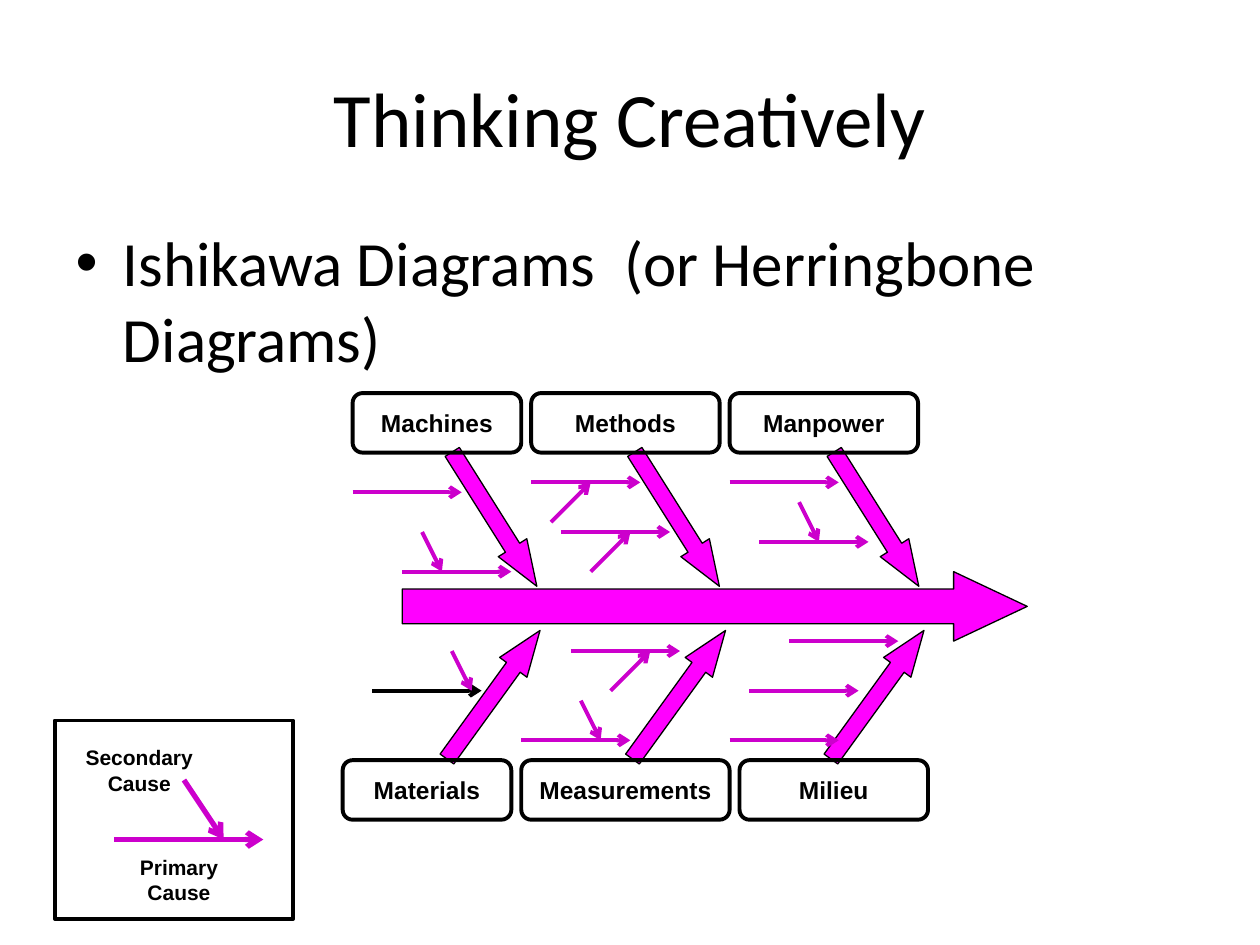
from dataclasses import dataclass
from typing import NamedTuple

from lxml import etree
from pptx import Presentation, util as u
from pptx.dml.color import RGBColor
from pptx.enum import shapes, text
from pptx.oxml.ns import qn


@dataclass(frozen=True)
class Theme:
    black: RGBColor = RGBColor(0, 0, 0)
    white: RGBColor = RGBColor(255, 255, 255)
    bone: RGBColor = RGBColor(255, 0, 255)
    cause: RGBColor = RGBColor(204, 0, 204)
    heading_font: str = "Calibri"
    label_font: str = "Arial"
    title_size: int = 44
    body_size: int = 36
    category_size: int = 14
    legend_size: int = 12
    thin: float = 0.75
    medium: float = 2.25
    thick: float = 3


class Category(NamedTuple):
    name: str
    column: float
    row: float
    columns: float


class Bone(NamedTuple):
    column: float  # centre
    row: float
    angle: float


class Cause(NamedTuple):
    column: float
    row: float
    end_column: float
    end_row: float


THEME = Theme()
# Grid of 2 mm cells, starting at the top left of the fishbone
CELL = u.Mm(2)
LEFT, TOP = u.Inches(2.72), u.Inches(3.12)
CATEGORY_ROWS = 6
PRIMARY_LENGTH = 11

CATEGORIES = [
    Category("Machines", 1, 0, 17), Category("Methods", 19, 0, 19),
    Category("Manpower", 39, 0, 19), Category("Materials", 0, 37, 17),
    Category("Measurements", 18, 37, 21), Category("Milieu", 40, 37, 19),
]
BONES = [Bone(column, 12.7, 57.8) for column in (53.8, 33.7, 15.3)]
BONES += [Bone(column, 30.4, 305.9) for column in (15.2, 33.9, 53.9)]
PRIMARY_STARTS = [(1, 10), (6, 18), (19, 9), (22, 14), (39, 9), (42, 15),
                  (23, 26), (18, 35), (45, 25), (41, 30), (39, 35)]
BLACK_START = (3, 30)
SECONDARY = [
    Cause(11, 26, 13, 30), Cause(24, 31, 26, 35), Cause(8, 14, 10, 18),
    Cause(46, 11, 48, 15), Cause(27, 30, 31, 26), Cause(25, 18, 29, 14),
    Cause(21, 13, 25, 9),
]
LEGEND_CAUSES = [Cause(-23, 45, -8, 45), Cause(-16, 39, -12, 45)]


def x(column: float) -> int:
    return round(LEFT + column * CELL)


def y(row: float) -> int:
    return round(TOP + row * CELL)


def style_text(frame, font: str, size: float, bold: bool = False) -> None:
    for para in frame.paragraphs:
        for span in para.runs:
            span.font.name = font
            span.font.size = u.Pt(size)
            span.font.bold = bold
            span.font.color.rgb = THEME.black


def add_label(frame, wording: str, size: float) -> None:
    frame.text = wording
    frame.word_wrap = False
    frame.vertical_anchor = text.MSO_ANCHOR.MIDDLE
    for para in frame.paragraphs:
        para.alignment = text.PP_ALIGN.CENTER
    style_text(frame, THEME.label_font, size, bold=True)


def add_box(page, kind, column: float, row: float, columns: float, rows: float,
            fill=None, width: float = THEME.medium):
    box = page.shapes.add_shape(kind, x(column), y(row),
                                round(columns * CELL), round(rows * CELL))
    box.shadow.inherit = False
    if fill is None:
        box.fill.background()
    else:
        box.fill.solid()
        box.fill.fore_color.rgb = fill
    box.line.color.rgb = THEME.black
    box.line.width = u.Pt(width)
    return box


def add_block_arrow(page, column: float, row: float, columns: float, rows: float,
                    head: float, angle: float = 0) -> None:
    arrow = add_box(page, shapes.MSO_SHAPE.RIGHT_ARROW, column, row, columns, rows,
                    THEME.bone, THEME.thin)
    arrow.adjustments[1] = head
    arrow.rotation = angle


def add_cause(page, cause: Cause, color: RGBColor = THEME.cause,
              width: float = THEME.medium) -> None:
    line = page.shapes.add_connector(
        shapes.MSO_CONNECTOR.STRAIGHT, x(cause.column), y(cause.row),
        x(cause.end_column), y(cause.end_row))
    line.line.color.rgb = color
    line.line.width = u.Pt(width)
    etree.SubElement(line.line._get_or_add_ln(), qn("a:tailEnd"), type="arrow")
    etree.SubElement(line._element.spPr, qn("a:effectLst"))


def add_primary(page, start: tuple[float, float],
                color: RGBColor = THEME.cause) -> None:
    column, row = start
    add_cause(page, Cause(column, row, column + PRIMARY_LENGTH, row), color)


def add_headings(page, deck) -> None:
    title, body = page.placeholders
    for holder, wording, size, top, height in (
            (title, "Thinking Creatively", THEME.title_size, 0.04, 1 / 6),
            (body, "Ishikawa Diagrams  (or Herringbone Diagrams)",
             THEME.body_size, 0.23, 0.66)):
        holder.left, holder.width = u.Inches(0.5), u.Inches(9)
        holder.top = round(deck.slide_height * top)
        holder.height = round(deck.slide_height * height)
        holder.text_frame.text = wording
        style_text(holder.text_frame, THEME.heading_font, size)


def add_fishbone(page) -> None:
    # Spine and main bones
    add_block_arrow(page, 6, 18, 63, 7, 1.06)
    length, height = 16, 3.4
    for bone in BONES:
        add_block_arrow(page, bone.column - length / 2, bone.row - height / 2,
                        length, height, 1.35, bone.angle)
    # Causes
    for start in PRIMARY_STARTS:
        add_primary(page, start)
    add_primary(page, BLACK_START, THEME.black)
    # Categories
    for item in CATEGORIES:
        box = add_box(page, shapes.MSO_SHAPE.ROUNDED_RECTANGLE, item.column,
                      item.row, item.columns, CATEGORY_ROWS)
        add_label(box.text_frame, item.name, THEME.category_size)
    for cause in SECONDARY:
        add_cause(page, cause)


def add_legend(page) -> None:
    add_box(page, shapes.MSO_SHAPE.RECTANGLE, -29, 33, 24, 20, THEME.white)
    for cause in LEGEND_CAUSES:
        add_cause(page, cause, width=THEME.thick)
    for wording, column, row in (("Primary\nCause", -25, 46),
                                 ("Secondary\nCause", -29, 35)):
        box = page.shapes.add_textbox(x(column), y(row), 17 * CELL,
                                      CATEGORY_ROWS * CELL)
        add_label(box.text_frame, wording, THEME.legend_size)


def main() -> None:
    deck = Presentation()
    deck.slide_width, deck.slide_height = u.Inches(10), u.Inches(7.5)
    page = deck.slides.add_slide(deck.slide_layouts[1])
    add_headings(page, deck)
    add_fishbone(page)
    add_legend(page)
    deck.save("out.pptx")


if __name__ == "__main__":
    main()
